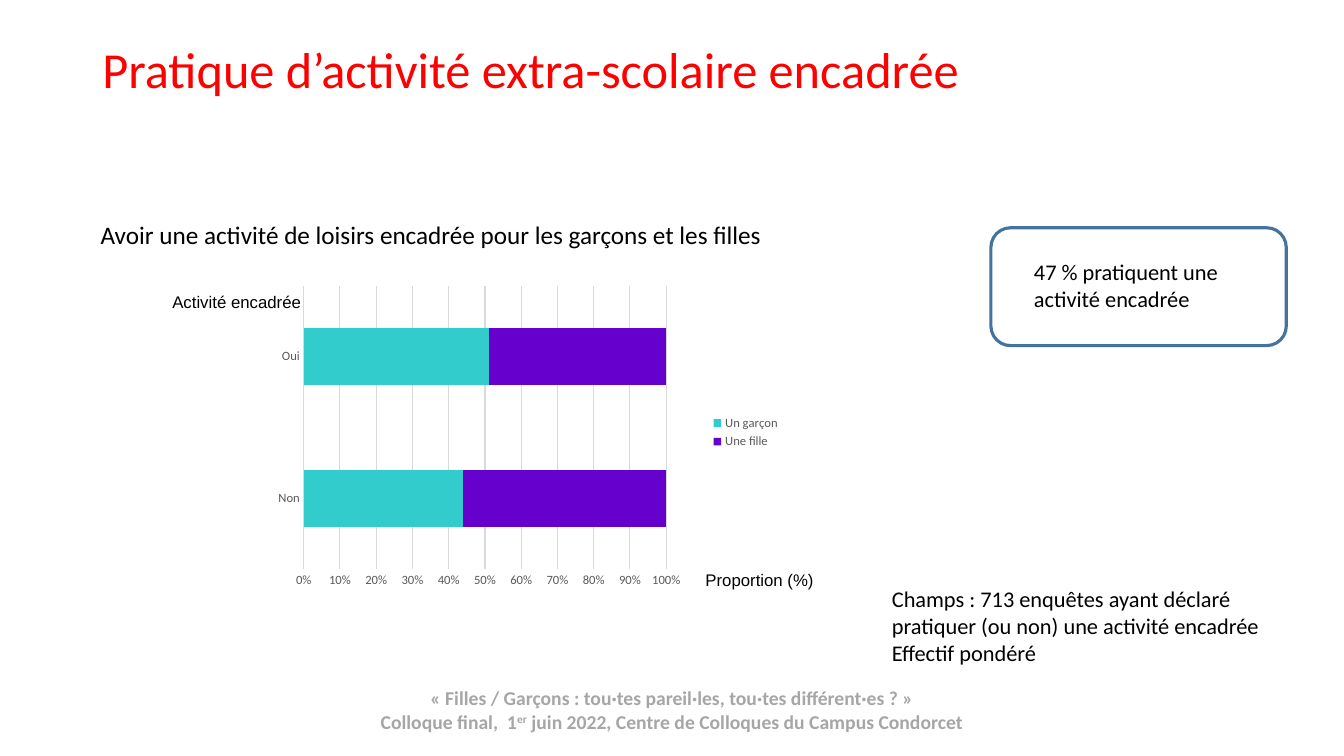
"""Build the slide on supervised leisure activities of boys and girls."""
from dataclasses import dataclass

from lxml.etree import SubElement
from pptx import Presentation
from pptx.chart.data import CategoryChartData
from pptx.dml.color import RGBColor
from pptx.enum.chart import XL_CHART_TYPE as ChartType
from pptx.enum.chart import XL_LEGEND_POSITION as LegendPlace
from pptx.enum.chart import XL_TICK_MARK as TickMark
from pptx.enum.shapes import MSO_SHAPE as Preset
from pptx.enum.text import PP_ALIGN as Align
from pptx.oxml.ns import qn
from pptx.util import Pt


@dataclass(frozen=True)
class Theme:
    font: str = "Calibri"
    label_font: str = "Arial"
    black: str = "000000"
    title: str = "FF0000"
    footer: str = "A6A6A6"
    frame: str = "43739E"
    axis_text: str = "595959"
    grid: str = "D9D9D9"
    title_size: int = 36
    heading_size: int = 18
    body_size: int = 16
    footer_size: int = 14
    label_size: int = 12
    chart_size: int = 10
    axis_size: int = 9
    frame_width: float = 2.25
    grid_width: float = 0.75


THEME = Theme()
SLIDE_SIZE = (960, 540)
SUPERSCRIPT = "er"

FOOTER = [
    ["«\u00a0Filles / Garçons : tou·tes pareil·les, tou·tes différent·es ?\u00a0»".replace("\u00a0", " ")],
    ["Colloque final,  1", SUPERSCRIPT, " juin 2022, Centre de Colloques du Campus Condorcet"],
]
TITLE = [["Pratique d’activité extra-scolaire encadrée"]]
HEADING = [["Avoir une activité de loisirs encadrée pour les garçons et les filles"]]
SCOPE = [
    ["Champs : 713 enquêtes ayant déclaré pratiquer (ou non) une activité encadrée"],
    ["Effectif pondéré"],
]
CATEGORY_LABEL = [["Activité encadrée"]]
VALUE_LABEL = [["Proportion (%)"]]
KEY_FIGURE = [["47 % pratiquent une activité encadrée"]]

ANSWERS = ["Non", "Oui"]
SERIES = [("Un garçon", (44, 51), "33CCCC"), ("Une fille", (56, 49), "6600CC")]

CHART_AREA = (190.8, 188.6, 373.7, 240.5)
PLOT_LAYOUT = {"x": 0.07, "y": 0.065, "w": 0.693, "h": 0.842}
FRAME_AREA = (707.8, 162.7, 211, 84.2)

TEXTS = [
    (FOOTER, (66, 486.7, 828, 41), THEME.footer_size, THEME.font, THEME.footer),
    (HEADING, (64.8, 153.4, 619, 29), THEME.heading_size, THEME.font, THEME.black),
    (SCOPE, (630, 414.7, 309.6, 65.5), THEME.body_size, THEME.font, THEME.black),
    (CATEGORY_LABEL, (116, 205.2, 150.5, 21.6), THEME.label_size, THEME.label_font, THEME.black),
    (VALUE_LABEL, (496.8, 403.2, 152.6, 21.6), THEME.label_size, THEME.label_font, THEME.black),
    (KEY_FIGURE, (731.5, 180.7, 163.4, 46), THEME.body_size, THEME.font, THEME.black),
    (TITLE, (66, 28.8, 828, 74.2), THEME.title_size, THEME.font, THEME.title),
]


def points(area):
    return [Pt(length) for length in area]


def color(code):
    return RGBColor.from_string(code)


def style_font(font, size, code, name=THEME.font):
    font.size = Pt(size)
    font.name = name
    font.color.rgb = color(code)


def style_line(line, code, width):
    line.color.rgb = color(code)
    line.width = Pt(width)


def add_text(page, lines, area, size, name, code):
    frame = page.shapes.add_textbox(*points(area)).text_frame
    frame.word_wrap = True
    for index, runs in enumerate(lines):
        para = frame.add_paragraph() if index else frame.paragraphs[0]
        if lines is FOOTER:
            para.alignment = Align.CENTER
        if lines is TITLE:
            para.line_spacing = 0.9
        for text in runs:
            span = para.add_run()
            span.text = text
            style_font(span.font, size, code, name)
            if lines is FOOTER:
                span.font.bold = True
            if text == SUPERSCRIPT:
                span.font._element.set("baseline", "30000")


def add_frame(page):
    box = page.shapes.add_shape(Preset.ROUNDED_RECTANGLE, *points(FRAME_AREA))
    box.shadow.inherit = False
    box.fill.background()
    style_line(box.line, THEME.frame, THEME.frame_width)


def place_plot(chart):
    plot_area = chart._chartSpace.chart.plotArea
    for old in plot_area.findall(qn("c:layout")):
        plot_area.remove(old)
    layout = SubElement(plot_area, qn("c:layout"))
    plot_area.insert(0, layout)
    manual = SubElement(layout, qn("c:manualLayout"))
    settings = {"layoutTarget": "inner", "xMode": "edge", "yMode": "edge", **PLOT_LAYOUT}
    for tag, value in settings.items():
        SubElement(manual, qn(f"c:{tag}")).set("val", str(value))


def add_activity_chart(page):
    data = CategoryChartData()
    data.categories = ANSWERS
    for name, values, _ in SERIES:
        data.add_series(name, values)
    chart = page.shapes.add_chart(ChartType.BAR_STACKED_100, *points(CHART_AREA), data).chart
    chart.has_title = False
    style_font(chart.font, THEME.chart_size, THEME.black)

    plot = chart.plots[0]
    plot.gap_width = 150
    plot.overlap = 100
    plot.vary_by_categories = False
    for series, (_, _, code) in zip(plot.series, SERIES):
        series.format.fill.solid()
        series.format.fill.fore_color.rgb = color(code)

    for axis in (chart.category_axis, chart.value_axis):
        axis.major_tick_mark = axis.minor_tick_mark = TickMark.NONE
        style_font(axis.tick_labels.font, THEME.axis_size, THEME.axis_text)
    chart.category_axis.has_major_gridlines = False
    style_line(chart.category_axis.format.line, THEME.grid, THEME.grid_width)
    values = chart.value_axis
    values.format.line.fill.background()
    values.has_major_gridlines = True
    style_line(values.major_gridlines.format.line, THEME.grid, THEME.grid_width)
    values.tick_labels.number_format = "0%"
    values.tick_labels.number_format_is_linked = False

    chart.has_legend = True
    chart.legend.position = LegendPlace.RIGHT
    chart.legend.include_in_layout = False
    style_font(chart.legend.font, THEME.axis_size, THEME.axis_text)
    place_plot(chart)


def main():
    deck = Presentation()
    deck.slide_width, deck.slide_height = points(SLIDE_SIZE)
    page = deck.slides.add_slide(deck.slide_layouts[6])
    add_frame(page)
    add_activity_chart(page)
    for text in TEXTS:
        add_text(page, *text)
    deck.save("out.pptx")


if __name__ == "__main__":
    main()
